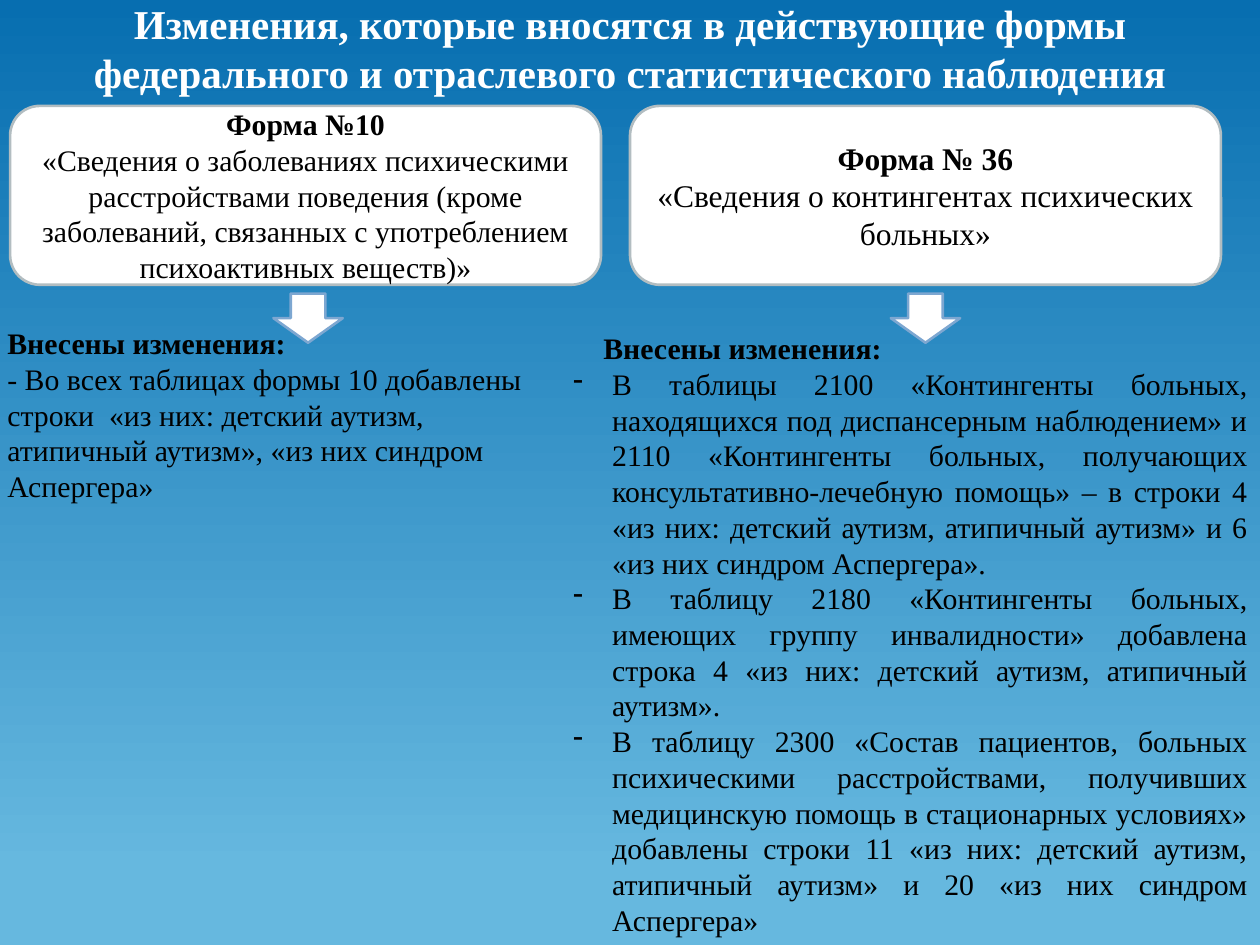
from dataclasses import dataclass

from lxml.etree import SubElement
from pptx import Presentation
from pptx.dml.color import RGBColor
from pptx.enum.shapes import MSO_SHAPE as Preset
from pptx.enum.text import MSO_ANCHOR as Anchor, MSO_AUTO_SIZE as AutoSize, PP_ALIGN as Align
from pptx.oxml.ns import qn
from pptx.util import Inches, Pt


@dataclass(frozen=True)
class Theme:
    font: str = "Times New Roman"
    sky_top: str = "076EB0"
    sky_bottom: str = "66B8DF"
    white: str = "FFFFFF"
    text: str = "000000"
    card_line: str = "B2BDC1"
    arrow_line: str = "7DA7D1"
    title_size: float = 23.4
    body_size: float = 17
    line_width: float = 1.5


@dataclass(frozen=True)
class Rect:
    left: float
    top: float
    width: float
    height: float

    def emu(self) -> list:
        return [Inches(v) for v in (self.left, self.top, self.width, self.height)]


@dataclass(frozen=True)
class Line:
    text: str
    bold: bool = False
    align: Align = Align.LEFT
    margin: float = 0
    indent: float = 0
    bullet: str = ""


@dataclass(frozen=True)
class FormColumn:
    card_left: float
    arrow_left: float
    form: str
    subject: str
    card_size: float
    changes_area: Rect
    changes: tuple


THEME = Theme()
WIDTH, HEIGHT = 10, 7.5
CARD_TOP, CARD_WIDTH, CARD_HEIGHT = 0.84, 4.69, 1.42
ARROW_TOP, ARROW_WIDTH, ARROW_HEIGHT = 2.33, 0.55, 0.39
HANG = 0.31
TITLE = "Изменения, которые вносятся в действующие формы федерального и отраслевого статистического наблюдения"
CHANGES_HEADING = "Внесены изменения:"


def change(text: str) -> Line:
    return Line(text, align=Align.JUSTIFY, margin=HANG, indent=-HANG, bullet="-")


COLUMNS = (
    FormColumn(
        0.08, 2.17, "Форма №10",
        "«Сведения о заболеваниях психическими расстройствами поведения (кроме заболеваний, "
        "связанных с употреблением психоактивных веществ)»",
        17, Rect(-0.04, 2.53, 4.49, 1.53),
        (
            Line(CHANGES_HEADING, bold=True),
            Line("- Во всех таблицах формы 10 добавлены строки  «из них: детский аутизм, "
                 "атипичный аутизм», «из них синдром Аспергера»"),
        ),
    ),
    FormColumn(
        5, 7.07, "Форма № 36",
        "«Сведения о контингентах психических больных»",
        18, Rect(4.45, 2.57, 5.55, 4.96),
        (
            Line(CHANGES_HEADING, bold=True, align=Align.JUSTIFY, indent=0.24),
            change("В таблицы 2100 «Контингенты больных, находящихся под диспансерным наблюдением» "
                   "и 2110 «Контингенты больных, получающих консультативно-лечебную помощь» – "
                   "в строки 4 «из них: детский аутизм, атипичный аутизм» и 6 «из них синдром Аспергера»."),
            change("В таблицу 2180 «Контингенты больных, имеющих группу инвалидности» добавлена "
                   "строка 4 «из них: детский аутизм, атипичный аутизм»."),
            change("В таблицу 2300 «Состав пациентов, больных психическими расстройствами, получивших "
                   "медицинскую помощь в стационарных условиях» добавлены строки 11 «из них: детский "
                   "аутизм, атипичный аутизм» и 20 «из них синдром Аспергера»"),
        ),
    ),
)


def rgb(color: str) -> RGBColor:
    return RGBColor.from_string(color)


def write(frame, lines: tuple, size: float, color: str) -> None:
    frame.word_wrap = True
    for number, line in enumerate(lines):
        paragraph = frame.add_paragraph() if number else frame.paragraphs[0]
        paragraph.text = line.text
        paragraph.alignment = line.align
        font = paragraph.font
        font.name, font.size, font.bold = THEME.font, Pt(size), line.bold
        font.color.rgb = rgb(color)
        if line.indent:
            properties = paragraph._p.get_or_add_pPr()
            properties.set("marL", str(Inches(line.margin)))
            properties.set("indent", str(Inches(line.indent)))
            if line.bullet:
                mark = SubElement(properties, qn("a:buChar"))
                mark.set("char", line.bullet)
                # The bullet has to precede the default run properties
                properties.insert(0, mark)


def draw_preset(slide, preset: Preset, area: Rect, line_color: str):
    shape = slide.shapes.add_shape(preset, *area.emu())
    shape.shadow.inherit = False
    shape.fill.solid()
    shape.fill.fore_color.rgb = rgb(THEME.white)
    shape.line.color.rgb = rgb(line_color)
    shape.line.width = Pt(THEME.line_width)
    return shape


def draw_background(slide) -> None:
    fill = slide.background.fill
    fill.gradient()
    fill.gradient_angle = 270
    stops = ((0, THEME.sky_top), (0.92, THEME.sky_bottom))
    for stop, (position, color) in zip(fill.gradient_stops, stops):
        stop.position = position
        stop.color.rgb = rgb(color)


def draw_title(slide) -> None:
    title = slide.shapes.title
    title.left, title.top, title.width, title.height = Rect(0, 0, WIDTH, 0.76).emu()
    write(title.text_frame, (Line(TITLE, bold=True, align=Align.CENTER),),
          THEME.title_size, THEME.white)
    title.text_frame.vertical_anchor = Anchor.MIDDLE
    title.text_frame.auto_size = AutoSize.NONE


def draw_column(slide, column: FormColumn) -> None:
    # Form card
    card = draw_preset(slide, Preset.ROUNDED_RECTANGLE,
                       Rect(column.card_left, CARD_TOP, CARD_WIDTH, CARD_HEIGHT), THEME.card_line)
    card.text_frame.vertical_anchor = Anchor.MIDDLE
    write(card.text_frame,
          (Line(column.form, bold=True, align=Align.CENTER), Line(column.subject, align=Align.CENTER)),
          column.card_size, THEME.text)
    # Arrow down to the changes
    draw_preset(slide, Preset.DOWN_ARROW,
                Rect(column.arrow_left, ARROW_TOP, ARROW_WIDTH, ARROW_HEIGHT), THEME.arrow_line)
    # List of changes
    changes = slide.shapes.add_textbox(*column.changes_area.emu())
    write(changes.text_frame, column.changes, THEME.body_size, THEME.text)
    changes.text_frame.auto_size = AutoSize.SHAPE_TO_FIT_TEXT


def main() -> None:
    deck = Presentation()
    deck.slide_width, deck.slide_height = Inches(WIDTH), Inches(HEIGHT)
    slide = deck.slides.add_slide(deck.slide_layouts[5])
    draw_background(slide)
    draw_title(slide)
    for column in COLUMNS:
        draw_column(slide, column)
    deck.save("out.pptx")


if __name__ == "__main__":
    main()
